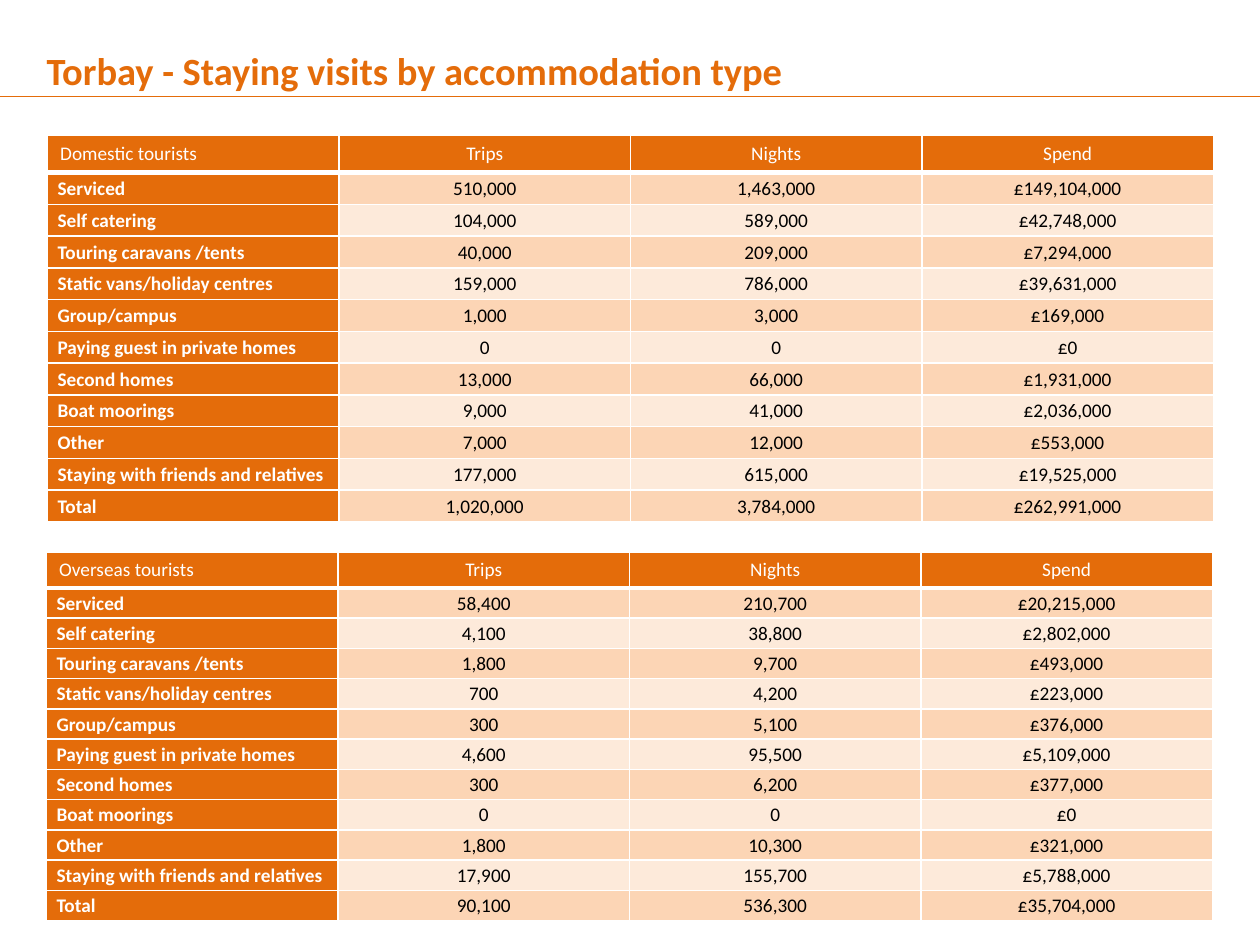
"""Build the slide of Torbay staying visits by accommodation type."""
import pptx
import pptx.dml.color
import pptx.enum.shapes
import pptx.enum.text
import pptx.oxml.ns
import pptx.util
from lxml import etree
from pptx.util import Cm

ORANGE, WHITE, BLACK = "E46C0A", "FFFFFF", "000000"
BANDS = ["FCD5B5", "FDEADA"]
qn = pptx.oxml.ns.qn


def color(value):
    return pptx.dml.color.RGBColor.from_string(value)


def set_borders(cell, bottom_width):
    properties = cell._tc.get_or_add_tcPr()
    widths = {"lnL": 1, "lnR": 1, "lnT": 1, "lnB": bottom_width}
    for index, (side, width) in enumerate(widths.items()):
        line = etree.Element(qn(f"a:{side}"), w=str(pptx.util.Pt(width)))
        fill = etree.SubElement(line, qn("a:solidFill"))
        etree.SubElement(fill, qn("a:srgbClr"), val=WHITE)
        properties.insert(index, line)


accommodation_types = [
    "Serviced", "Self catering", "Touring caravans /tents",
    "Static vans/holiday centres", "Group/campus",
    "Paying guest in private homes", "Second homes", "Boat moorings",
    "Other", "Staying with friends and relatives", "Total",
]
domestic = [
    (510000, 1463000, 149104000), (104000, 589000, 42748000),
    (40000, 209000, 7294000), (159000, 786000, 39631000),
    (1000, 3000, 169000), (0, 0, 0), (13000, 66000, 1931000),
    (9000, 41000, 2036000), (7000, 12000, 553000),
    (177000, 615000, 19525000), (1020000, 3784000, 262991000),
]
overseas = [
    (58400, 210700, 20215000), (4100, 38800, 2802000),
    (1800, 9700, 493000), (700, 4200, 223000),
    (300, 5100, 376000), (4600, 95500, 5109000), (300, 6200, 377000),
    (0, 0, 0), (1800, 10300, 321000),
    (17900, 155700, 5788000), (90100, 536300, 35704000),
]
tables = [
    ("Domestic tourists", domestic, 0.96, 2.73, 0.75, 0.64),
    ("Overseas tourists", overseas, 0.94, 11.13, 0.61, 0.61),
]

presentation = pptx.Presentation()
presentation.slide_width, presentation.slide_height = Cm(25.4), Cm(19.05)
slide = presentation.slides.add_slide(presentation.slide_layouts[6])

title = slide.shapes.add_textbox(Cm(0.69), Cm(0.64), Cm(24.2), Cm(1.39))
title.text_frame.word_wrap = True
paragraph = title.text_frame.paragraphs[0]
paragraph.text = "Torbay - Staying visits by accommodation type"
paragraph.line_spacing = 1.2
paragraph.font.name = "Calibri"
paragraph.font.size = pptx.util.Pt(22)
paragraph.font.bold = True
paragraph.font.color.rgb = color(ORANGE)

rule = slide.shapes.add_connector(
    pptx.enum.shapes.MSO_CONNECTOR.STRAIGHT, 0, Cm(1.95), Cm(25.4), Cm(1.95))
rule.line.color.rgb = color(ORANGE)
rule.line.width = pptx.util.Pt(0.75)
etree.SubElement(rule._element.spPr, qn("a:effectLst"))

for heading, visits, left, top, header_height, row_height in tables:
    rows = [(heading, "Trips", "Nights", "Spend")]
    for name, (trips, nights, spend) in zip(accommodation_types, visits):
        rows.append((name, f"{trips:,}", f"{nights:,}", f"£{spend:,}"))
    height = header_height + row_height * len(visits)
    table = slide.shapes.add_table(
        len(rows), 4, Cm(left), Cm(top), Cm(23.5), Cm(height)).table
    for row_index, row in enumerate(rows):
        is_header = row_index == 0
        table.rows[row_index].height = Cm(header_height if is_header else row_height)
        for column_index, text in enumerate(row):
            is_label = column_index == 0
            is_orange = is_header or is_label
            cell = table.cell(row_index, column_index)
            cell.vertical_anchor = pptx.enum.text.MSO_ANCHOR.MIDDLE
            cell.fill.solid()
            cell.fill.fore_color.rgb = color(
                ORANGE if is_orange else BANDS[(row_index - 1) % 2])
            set_borders(cell, 3 if is_header else 1)
            if not is_header:
                cell.margin_left = Cm(0.2 if is_label else 0.02)
                cell.margin_right = cell.margin_top = Cm(0.02)
                cell.margin_bottom = 0
            paragraph = cell.text_frame.paragraphs[0]
            paragraph.text = text
            if not is_label:
                paragraph.alignment = pptx.enum.text.PP_ALIGN.CENTER
            paragraph.font.name = "Calibri"
            paragraph.font.size = pptx.util.Pt(11)
            paragraph.font.bold = is_label and not is_header
            paragraph.font.color.rgb = color(WHITE if is_orange else BLACK)

presentation.save("out.pptx")
